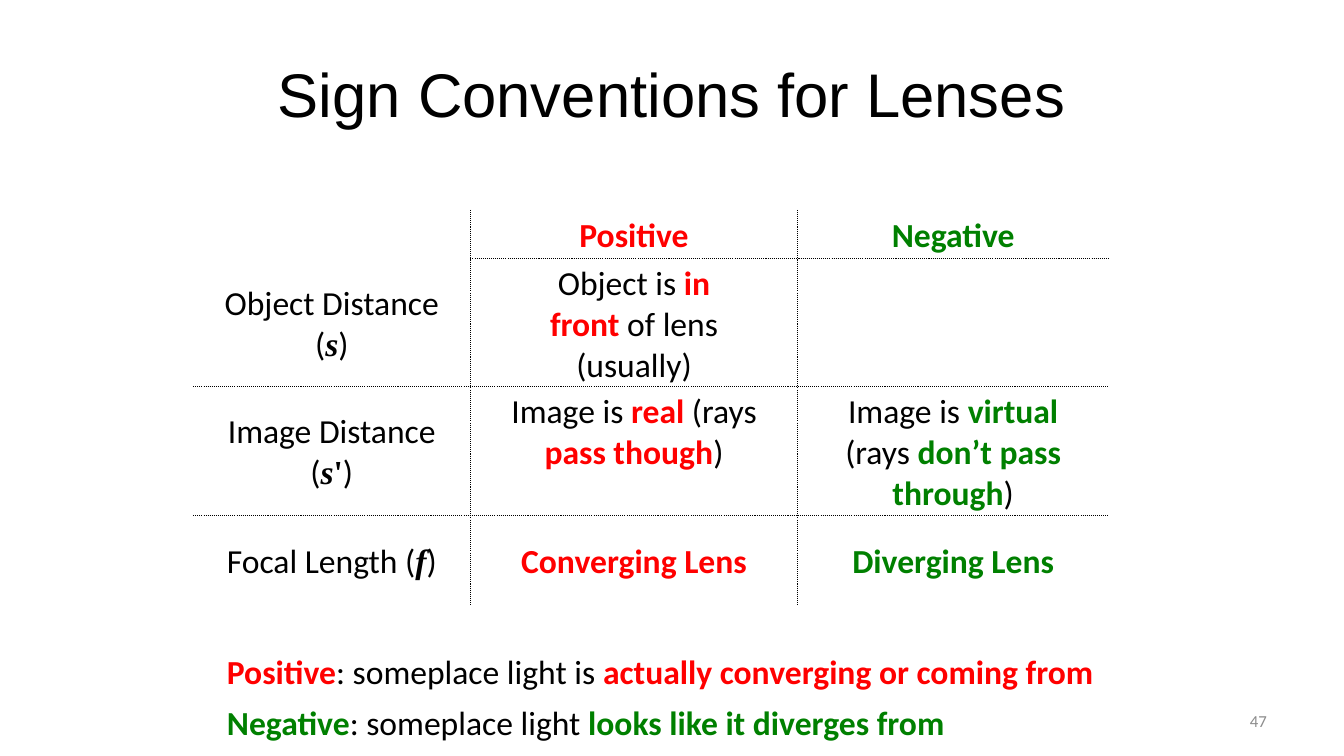
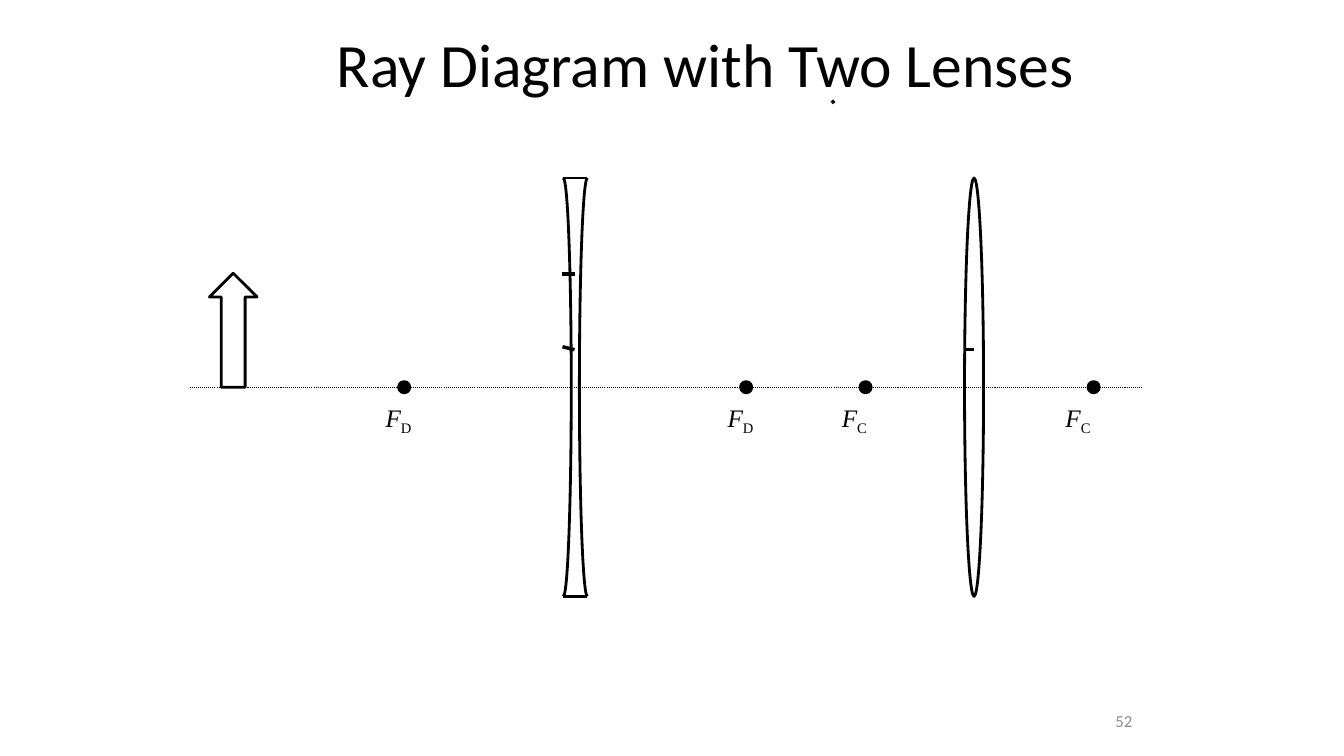
from dataclasses import dataclass
from itertools import accumulate

from lxml.etree import SubElement
from pptx import Presentation
from pptx.dml.color import RGBColor
from pptx.enum.dml import MSO_LINE
from pptx.enum.shapes import MSO_CONNECTOR, MSO_SHAPE
from pptx.enum.text import MSO_ANCHOR as Anchor, PP_ALIGN as Align
from pptx.oxml.ns import qn
from pptx.util import Pt


@dataclass(frozen=True)
class Style:
    font: str = "Calibri"
    color: str = "000000"
    bold: bool = False
    italic: bool = False
    baseline: int = 0


@dataclass(frozen=True)
class Theme:
    ink: str = "000000"
    title_size: int = 44
    body_size: int = 24
    label_size: int = 18
    number_size: int = 12
    hairline: float = 0.75
    outline: float = 2
    tick: float = 2.5
    plain: Style = Style()
    heading: Style = Style(font="Arial")
    positive: Style = Style(color="FF0000", bold=True)
    negative: Style = Style(color="008000", bold=True)
    symbol: Style = Style(font="Times New Roman", bold=True, italic=True)
    prime: Style = Style(font="Times New Roman", bold=True)
    focus: Style = Style(font="Times New Roman", italic=True)
    subscript: Style = Style(font="Times New Roman", baseline=-25000)
    number: Style = Style(color="8C8C8C")


THEME = Theme()
PLAIN, POS, NEG = THEME.plain, THEME.positive, THEME.negative
SYMBOL, PRIME = THEME.symbol, THEME.prime
NO_GRID_STYLE = "{2D5ABB26-0587-4C30-8999-92F81FD0307C}"

# Each text is a list of (words, style) runs.
CONVENTIONS = [
    [[], [("Positive", POS)], [("Negative", NEG)]],
    [
        [("Object Distance (", PLAIN), ("s", SYMBOL), (")", PLAIN)],
        [("Object is ", PLAIN), ("in front", POS), (" of lens (usually)", PLAIN)],
        [],
    ],
    [
        [("Image Distance (", PLAIN), ("s", SYMBOL), ("'", PRIME), (")", PLAIN)],
        [("Image is ", PLAIN), ("real ", POS), ("(rays ", PLAIN),
         ("pass though", POS), (")", PLAIN)],
        [("Image is ", PLAIN), ("virtual ", NEG), ("(rays ", PLAIN),
         ("don’t pass through", NEG), (")", PLAIN)],
    ],
    [
        [("Focal Length (", PLAIN), ("f", SYMBOL), (")", PLAIN)],
        [("Converging Lens", POS)],
        [("Diverging Lens", NEG)],
    ],
]
COLUMN_WIDTHS = [198, 233.8, 222.2]
ROW_HEIGHTS = [34.8, 91.6, 91.6, 64]
SIDE_MARGIN = 19
WIDE_MARGINS = {(1, 1): 37}
TOP_ALIGNED = {(1, 1), (2, 1), (2, 2)}

SUMMARY = [
    [("Positive", POS), (": someplace light is ", PLAIN),
     ("actually converging or coming from", POS)],
    [("Negative", NEG), (": someplace light ", PLAIN),
     ("looks like it diverges from", NEG)],
]

AXIS_Y, AXIS_START, AXIS_END = 276.6, 135.5, 815.6
LENS_HEIGHT = 298.8
DIVERGING_X, CONVERGING_X = 411, 695.8
# Lens letter, position on the axis, shift of the label's centre
FOCAL_POINTS = [("D", 288.7, -4), ("D", 533, -4), ("C", 618.3, -8), ("C", 781.2, -11.2)]
RAY_TICKS = [
    (594, 73.5, 596, 72),
    (401.8, 247.7, 410.4, 249.8),
    (695.5, 249.8, 690, 249.8),
    (401.8, 195.8, 410.4, 195.8),
]


def rgb(color):
    return RGBColor.from_string(color)


def write_runs(paragraph, runs, size, align):
    paragraph.alignment = align
    for words, style in runs:
        run = paragraph.add_run()
        run.text = words
        font = run.font
        font.name, font.size = style.font, Pt(size)
        font.bold, font.italic = style.bold, style.italic
        font.color.rgb = rgb(style.color)
        if style.baseline:
            font._element.set("baseline", str(style.baseline))


def add_text(slide, box, paragraphs, size, align=Align.LEFT, anchor=Anchor.TOP, gap=0):
    frame = slide.shapes.add_textbox(*map(Pt, box)).text_frame
    frame.word_wrap = True
    frame.vertical_anchor = anchor
    for index, runs in enumerate(paragraphs):
        paragraph = frame.add_paragraph() if index else frame.paragraphs[0]
        paragraph.space_before = Pt(gap if index else 0)
        write_runs(paragraph, runs, size, align)


def add_line(shapes, ends, width, dotted=False):
    line = shapes.add_connector(MSO_CONNECTOR.STRAIGHT, *map(Pt, ends))
    line.line.color.rgb = rgb(THEME.ink)
    line.line.width = Pt(width)
    if dotted:
        line.line.dash_style = MSO_LINE.ROUND_DOT
    SubElement(line._element.spPr, qn("a:effectLst"))


def add_outline(shapes, preset, center_x, center_y, width, height, filled=False):
    """Add a black outlined shape placed by its centre."""
    left, top = center_x - width / 2, center_y - height / 2
    shape = shapes.add_shape(preset, *map(Pt, (left, top, width, height)))
    shape.shadow.inherit = False
    shape.line.color.rgb = rgb(THEME.ink)
    shape.line.width = Pt(THEME.outline)
    if filled:
        shape.fill.solid()
        shape.fill.fore_color.rgb = rgb(THEME.ink)
    else:
        shape.fill.background()
    return shape


def add_slide(deck, title, title_style, title_box, number, number_right):
    slide = deck.slides.add_slide(deck.slide_layouts[6])
    add_text(slide, title_box, [[(title, title_style)]], THEME.title_size,
             Align.CENTER, Anchor.MIDDLE)
    add_text(slide, (number_right - 168, 500.5, 168, 29), [[(number, THEME.number)]],
             THEME.number_size, Align.RIGHT, Anchor.MIDDLE)
    return slide


def add_conventions_table(slide, left, top):
    frame = slide.shapes.add_table(
        len(ROW_HEIGHTS), len(COLUMN_WIDTHS), Pt(left), Pt(top),
        Pt(sum(COLUMN_WIDTHS)), Pt(sum(ROW_HEIGHTS)))
    table = frame.table
    table.first_row = table.horz_banding = False
    table._tbl.tblPr.find(qn("a:tableStyleId")).text = NO_GRID_STYLE
    for column, width in zip(table.columns, COLUMN_WIDTHS):
        column.width = Pt(width)
    for r, (height, texts) in enumerate(zip(ROW_HEIGHTS, CONVENTIONS)):
        table.rows[r].height = Pt(height)
        for c, runs in enumerate(texts):
            cell = table.cell(r, c)
            at_top = (r, c) in TOP_ALIGNED
            cell.margin_left = cell.margin_right = Pt(WIDE_MARGINS.get((r, c), SIDE_MARGIN))
            cell.margin_top, cell.margin_bottom = Pt(3.2 if at_top else 2.6), Pt(0)
            cell.vertical_anchor = Anchor.TOP if at_top else Anchor.MIDDLE
            write_runs(cell.text_frame.paragraphs[0], runs, THEME.body_size, Align.CENTER)
            cell.fill.background()


def add_table_rules(slide, left, top):
    """Draw the dotted rules between columns and rows; the corner cell stays open."""
    *column_edges, right = [left + x for x in accumulate(COLUMN_WIDTHS)]
    *row_edges, bottom = [top + y for y in accumulate(ROW_HEIGHTS)]
    rules = [(x, top, x, bottom) for x in column_edges]
    for index, y in enumerate(row_edges):
        rules.append((left if index else column_edges[0], y, right, y))
    for rule in rules:
        add_line(slide.shapes, rule, THEME.hairline, dotted=True)


def add_diverging_lens(slide):
    lens = slide.shapes.add_group_shape().shapes
    half_width, bulge = 8.6, 11.4
    left, right = DIVERGING_X - half_width, DIVERGING_X + half_width
    # Arc angles in units of 100000/60000 degrees: 162 is the top, 54 the bottom
    for x, start, end in ((left, 162, 54), (right, 54, 162)):
        arc = add_outline(lens, MSO_SHAPE.ARC, x, AXIS_Y, bulge, LENS_HEIGHT)
        arc.adjustments[0], arc.adjustments[1] = start, end
    for y in (AXIS_Y - LENS_HEIGHT / 2, AXIS_Y + LENS_HEIGHT / 2):
        add_line(lens, (left, y, right, y), THEME.outline)


def build_conventions(deck):
    slide = add_slide(deck, "Sign Conventions for Lenses", THEME.heading,
                      (48, 21.5, 864, 90), "47", 912)
    left, top = 138, 150
    add_conventions_table(slide, left, top)
    add_table_rules(slide, left, top)
    add_text(slide, (155, 461.5, 649, 73), SUMMARY, THEME.body_size, gap=7.4)


def build_ray_diagram(deck):
    slide = add_slide(deck, "Ray Diagram with Two Lenses", PLAIN,
                      (180, 0, 648, 90), "52", 816)
    shapes = slide.shapes
    arrow_height = 81.4
    add_outline(shapes, MSO_SHAPE.UP_ARROW, 166.6, AXIS_Y - arrow_height / 2, 34, arrow_height)
    add_line(shapes, (AXIS_START, AXIS_Y, AXIS_END, AXIS_Y), THEME.hairline, dotted=True)
    add_diverging_lens(slide)
    add_outline(shapes, MSO_SHAPE.OVAL, CONVERGING_X, AXIS_Y, 13.6, LENS_HEIGHT)
    for tick in RAY_TICKS:
        add_line(shapes, tick, THEME.tick)
    for letter, x, shift in FOCAL_POINTS:
        add_outline(shapes, MSO_SHAPE.OVAL, x, AXIS_Y, 8, 8, filled=True)
        add_text(slide, (x + shift - 22, 283.8, 44, 29),
                 [[("F", THEME.focus), (letter, THEME.subscript)]],
                 THEME.label_size, Align.CENTER)


def main():
    deck = Presentation()
    deck.slide_width, deck.slide_height = Pt(960), Pt(540)
    build_conventions(deck)
    build_ray_diagram(deck)
    deck.save("out.pptx")


if __name__ == "__main__":
    main()
